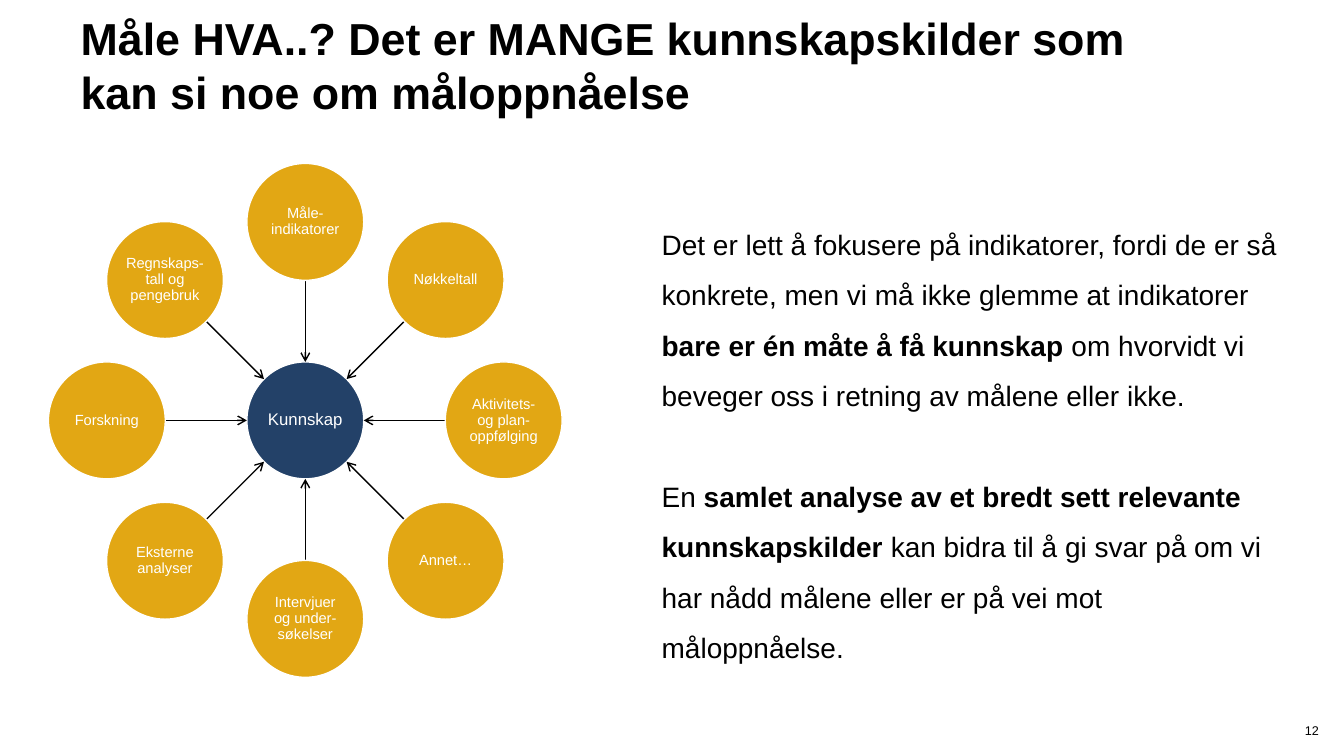
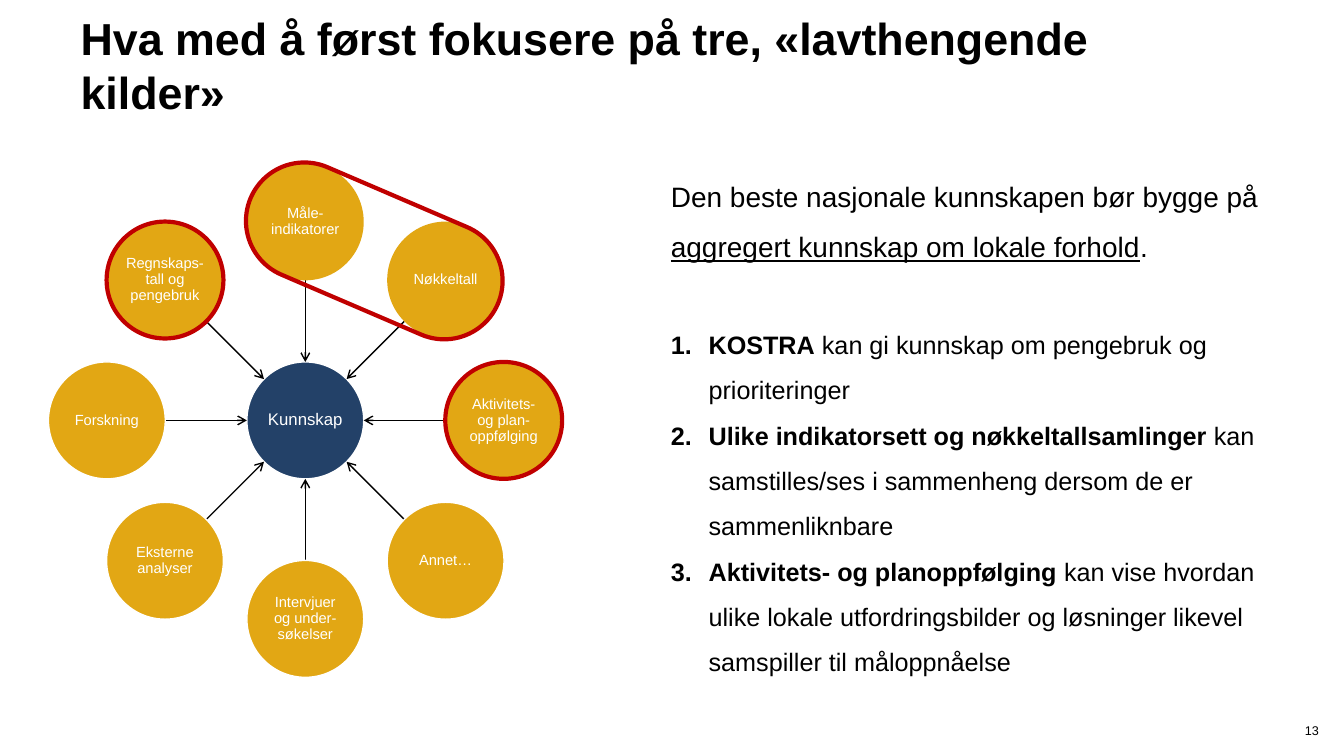
"""Build two slides about the knowledge sources behind goal achievement."""
import math
from dataclasses import dataclass

import lxml.etree
import pptx
import pptx.dml.color
import pptx.enum.shapes
import pptx.enum.text
import pptx.oxml.ns
import pptx.util

Pt = pptx.util.Pt
Anchor = pptx.enum.text.MSO_ANCHOR
Align = pptx.enum.text.PP_ALIGN
Shape = pptx.enum.shapes.MSO_SHAPE


@dataclass(frozen=True)
class Theme:
    """Colours, font and type sizes shared by the slides."""
    font: str = "Arial"
    ink: str = "000000"
    paper: str = "FFFFFF"
    hub: str = "234168"
    source: str = "E2A714"
    highlight: str = "C00000"
    title_size: float = 32
    body_size: float = 20
    list_size: float = 18
    hub_size: float = 12
    source_size: float = 10.5
    number_size: float = 9


THEME = Theme()
SLIDE_SIZE = (960.48, 540)
HUB_CENTER = (218.2, 300.3)
CIRCLE = 83.5
ORBIT = 141.8
PARAGRAPH_GAP = 36
LIST_INDENT = 27
SOURCES = [
    "Måle-indikatorer",
    "Nøkkeltall",
    "Aktivitets- og plan-oppfølging",
    "Annet…",
    "Intervjuer og under-søkelser",
    "Eksterne analyser",
    "Forskning",
    "Regnskaps-tall og pengebruk",
]


def rgb(value):
    """Turn a hex string into a colour."""
    return pptx.dml.color.RGBColor.from_string(value)


def add_child(parent, tag, **attributes):
    """Append a drawing element to an XML parent."""
    return lxml.etree.SubElement(parent, pptx.oxml.ns.qn(tag), attributes)


def style_span(span, size, color=THEME.ink, style=""):
    """Format a run; style may hold b for bold and u for underline."""
    span.font.name = THEME.font
    span.font.size = Pt(size)
    span.font.color.rgb = rgb(color)
    span.font.bold = "b" in style
    span.font.underline = "u" in style


def prepare_frame(frame, anchor, margins=None):
    """Make a text frame wrap and set its anchor and optional margins."""
    frame.word_wrap = True
    frame.vertical_anchor = anchor
    if margins is not None:
        frame.margin_left = frame.margin_right = Pt(margins)
        frame.margin_top = frame.margin_bottom = Pt(margins)


def add_box(page, place, anchor, margins=None):
    """Add a text box and return its frame."""
    frame = page.shapes.add_textbox(*map(Pt, place)).text_frame
    prepare_frame(frame, anchor, margins)
    return frame


def add_label(page, place, text, size, anchor, align, style=""):
    """Add a one-paragraph text box without margins."""
    frame = add_box(page, place, anchor, 0)
    frame.text = text
    para = frame.paragraphs[0]
    para.alignment = align
    style_span(para.runs[0], size, style=style)


def fill_para(para, spans, size):
    """Write styled spans into a body paragraph."""
    para.line_spacing = 1.5
    for text, style in spans:
        span = para.add_run()
        span.text = text
        style_span(span, size, style=style)


def number_para(para):
    """Give a paragraph automatic numbering with a hanging indent."""
    properties = para._p.get_or_add_pPr()
    properties.set("marL", str(Pt(LIST_INDENT)))
    properties.set("indent", str(-Pt(LIST_INDENT)))
    add_child(properties, "a:buFont", typeface=THEME.font)
    add_child(properties, "a:buAutoNum", type="arabicPeriod")


def add_body(page, place, paragraphs, items=()):
    """Add body paragraphs, followed by an optional numbered list."""
    frame = add_box(page, place, Anchor.MIDDLE)
    for index, spans in enumerate([*paragraphs, *items]):
        para = frame.add_paragraph() if index else frame.paragraphs[0]
        is_item = index >= len(paragraphs)
        fill_para(para, spans, THEME.list_size if is_item else THEME.body_size)
        if 0 < index <= len(paragraphs):
            para.space_before = Pt(PARAGRAPH_GAP)
        if is_item:
            number_para(para)


def set_outline(shape, color, width):
    """Outline a shape, or remove its outline when no colour is given."""
    if color is None:
        shape.line.fill.background()
    else:
        shape.line.color.rgb = rgb(color)
        shape.line.width = Pt(width)


def add_circle(page, center, text, fill, size, outline, width=1):
    """Add a labelled circle around a centre point."""
    left, top = (value - CIRCLE / 2 for value in center)
    circle = page.shapes.add_shape(
        Shape.OVAL, Pt(left), Pt(top), Pt(CIRCLE), Pt(CIRCLE))
    circle.shadow.inherit = False
    circle.fill.solid()
    circle.fill.fore_color.rgb = rgb(fill)
    set_outline(circle, outline, width)
    prepare_frame(circle.text_frame, Anchor.MIDDLE, 0.72)
    circle.text_frame.text = text
    para = circle.text_frame.paragraphs[0]
    para.alignment = Align.CENTER
    para.line_spacing = 0.9
    style_span(para.runs[0], size, THEME.paper)


def add_arrow(page, start, end):
    """Add a thin line with an open arrowhead at its end."""
    arrow = page.shapes.add_connector(
        pptx.enum.shapes.MSO_CONNECTOR.STRAIGHT, *map(Pt, (*start, *end)))
    set_outline(arrow, THEME.ink, 1)
    add_child(arrow.line._get_or_add_ln(), "a:tailEnd", type="arrow")
    add_child(arrow._element.spPr, "a:effectLst")


def orbit_point(angle, radius):
    """Find a point around the hub, clockwise from the top."""
    return (HUB_CENTER[0] + radius * math.sin(angle),
            HUB_CENTER[1] - radius * math.cos(angle))


def add_wheel(page, highlighted=(), plain=()):
    """Draw the sources around the hub, some highlighted or unlined."""
    add_circle(page, HUB_CENTER, "Kunnskap", THEME.hub, THEME.hub_size,
               THEME.paper)
    for index, name in enumerate(SOURCES):
        angle = math.tau * index / len(SOURCES)
        add_arrow(page, orbit_point(angle, ORBIT - CIRCLE / 2),
                  orbit_point(angle, CIRCLE / 2))
        outline, width = THEME.paper, 1
        if index in highlighted:
            outline, width = THEME.highlight, 3
        elif index in plain:
            outline = None
        add_circle(page, orbit_point(angle, ORBIT), name, THEME.source,
                   THEME.source_size, outline, width)


def add_capsule(page, place, rotation):
    """Add a rotated, unfilled capsule that encloses two sources."""
    capsule = page.shapes.add_shape(Shape.ROUNDED_RECTANGLE, *map(Pt, place))
    capsule.adjustments[0] = 0.5
    capsule.rotation = rotation
    capsule.shadow.inherit = False
    capsule.fill.background()
    set_outline(capsule, THEME.highlight, 3)


def add_page(deck, title, number):
    """Add a blank page with its title and page number."""
    page = deck.slides.add_slide(deck.slide_layouts[6])
    page.background.fill.solid()
    page.background.fill.fore_color.rgb = rgb(THEME.paper)
    add_label(page, (57.6, 7.9, 790.6, 87.8), title, THEME.title_size,
              Anchor.TOP, Align.LEFT, "b")
    add_label(page, (870.5, 516.2, 72, 10.8), str(number), THEME.number_size,
              Anchor.MIDDLE, Align.RIGHT)
    return page


def build_many_sources(deck):
    """Build the page that shows all the sources."""
    page = add_page(
        deck,
        "Måle HVA..? Det er MANGE kunnskapskilder som kan si noe om måloppnåelse",
        12)
    add_body(page, (465.8, 115.2, 460.8, 394.6), [
        [("Det er lett å fokusere på indikatorer, fordi de er så konkrete, "
          "men vi må ikke glemme at indikatorer ", ""),
         ("bare er én måte å få kunnskap", "b"),
         (" om hvorvidt vi beveger oss i retning av målene eller ikke.", "")],
        [("En ", ""),
         ("samlet analyse av et bredt sett relevante kunnskapskilder ", "b"),
         ("kan bidra til å gi svar på om vi har nådd målene eller er på vei "
          "mot måloppnåelse.", "")],
    ])
    add_wheel(page)


def build_first_sources(deck):
    """Build the page that highlights three sources to start with."""
    page = add_page(
        deck, "Hva med å først fokusere på tre, «lavthengende kilder»", 13)
    add_body(page, (472.3, 115.2, 464.4, 369.4), [
        [("Den beste nasjonale kunnskapen bør bygge på ", ""),
         ("aggregert kunnskap om lokale forhold", "u"),
         (".", "")],
    ], [
        [("KOSTRA", "b"),
         (" kan gi kunnskap om pengebruk og prioriteringer", "")],
        [("Ulike indikatorsett og nøkkeltallsamlinger ", "b"),
         ("kan samstilles/ses i sammenheng dersom de er sammenliknbare", "")],
        [("Aktivitets- og planoppfølging ", "b"),
         ("kan vise hvordan ulike lokale utfordringsbilder og løsninger "
          "likevel samspiller til måloppnåelse", "")],
    ])
    add_wheel(page, highlighted=(2, 7), plain=(0, 1))
    add_capsule(page, (171.4, 137.5, 192.2, CIRCLE), 23.2)


def main():
    """Build and save the deck."""
    deck = pptx.Presentation()
    deck.slide_width, deck.slide_height = map(Pt, SLIDE_SIZE)
    build_many_sources(deck)
    build_first_sources(deck)
    deck.save("out.pptx")


if __name__ == "__main__":
    main()
